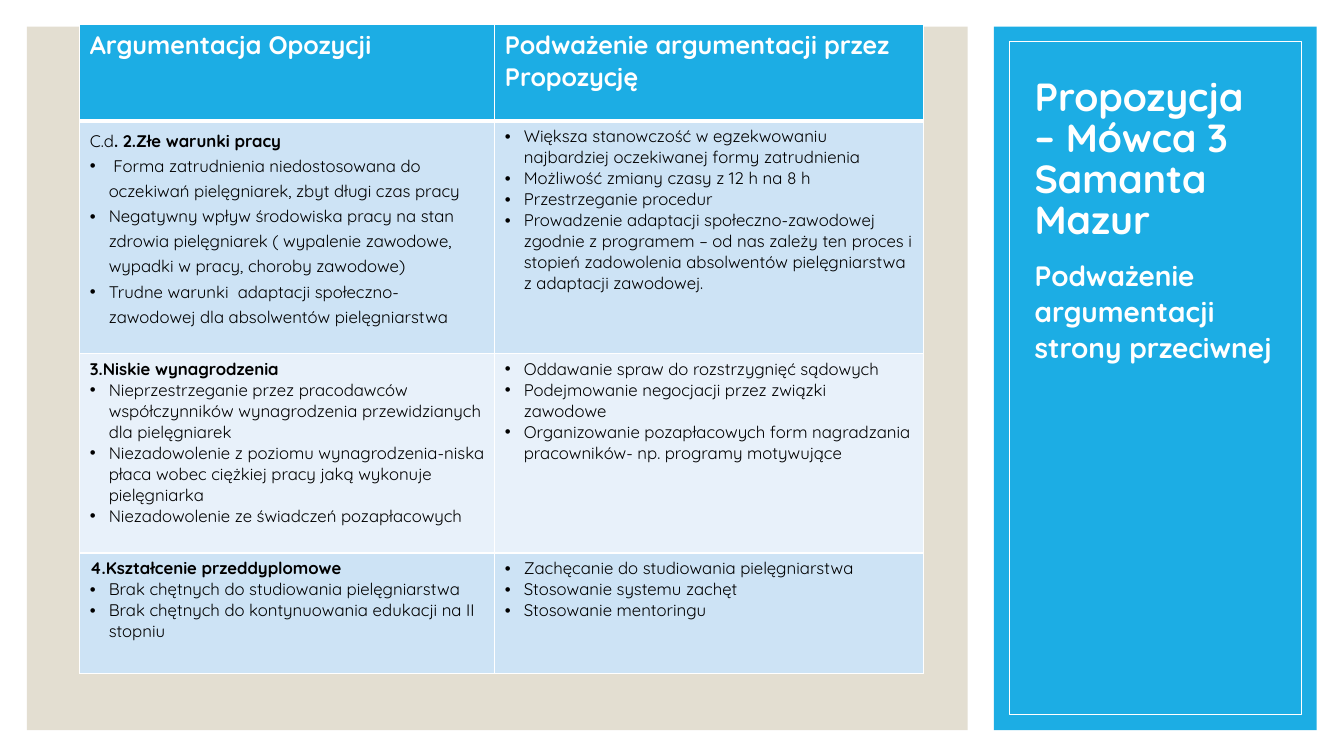
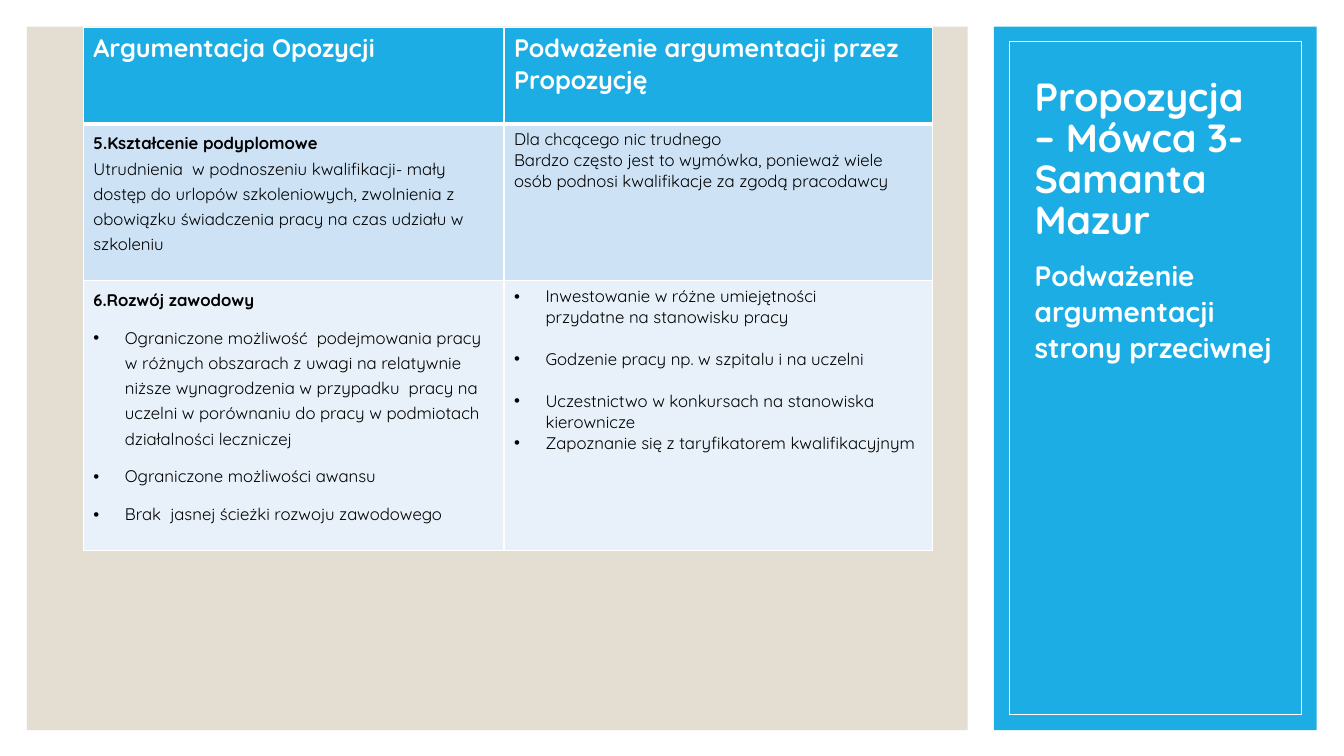
from dataclasses import dataclass

from lxml.etree import SubElement
from pptx import Presentation
from pptx.dml.color import RGBColor
from pptx.enum.shapes import MSO_SHAPE
from pptx.enum.text import MSO_ANCHOR
from pptx.oxml.ns import qn
from pptx.util import Pt


@dataclass(frozen=True)
class Theme:
    font: str = "Quicksand"
    accent: str = "1CADE4"
    sand: str = "E3DED1"
    white: str = "FFFFFF"
    ink: str = "000000"
    row_tints: tuple = ("CDE3F5", "E8F1FA")
    title_size: float = 28
    subtitle_size: float = 20
    header_size: float = 18
    body_size: float = 12
    hairline: float = 0.5
    grid_line: float = 1
    header_line: float = 3


@dataclass
class Entry:
    """One paragraph of a cell; lead is regular text in front of a bold heading."""
    text: str
    bullet: bool = True
    bold: bool = False
    lead: str = ""
    before: float = 0


@dataclass
class CellText:
    entries: list
    leading: float = 1.0
    indent: float = 13.5


def heading(text, lead=""):
    return Entry(text, bullet=False, bold=True, lead=lead)


def plain(text):
    return Entry(text, bullet=False)


def bullets(*texts, before=0):
    return [Entry(text, before=before) for text in texts]


class Deck:
    def __init__(self, theme):
        self.theme = theme
        self.prs = Presentation()
        self.prs.slide_width, self.prs.slide_height = Pt(960), Pt(540)
        self.slide = None

    def add_slide(self, title, subtitle):
        """Start a slide with the shared panels and the side texts."""
        t = self.theme
        self.slide = self.prs.slides.add_slide(self.prs.slide_layouts[6])
        self.rect(19.2, 19, 672, 502.5, fill=t.sand)
        self.rect(710, 19, 230.5, 502.5, fill=t.accent)
        self.rect(720.75, 29.5, 209, 481, line=t.white)
        self.side_text(title, 47.5, 129.5, t.title_size, 0.87, MSO_ANCHOR.BOTTOM)
        self.side_text(subtitle, 180, 276, t.subtitle_size, 1.06, MSO_ANCHOR.TOP)

    def rect(self, left, top, width, height, fill=None, line=None):
        shape = self.slide.shapes.add_shape(
            MSO_SHAPE.RECTANGLE, Pt(left), Pt(top), Pt(width), Pt(height))
        shape.shadow.inherit = False
        if fill:
            shape.fill.solid()
            shape.fill.fore_color.rgb = RGBColor.from_string(fill)
        else:
            shape.fill.background()
        if line:
            shape.line.color.rgb = RGBColor.from_string(line)
            shape.line.width = Pt(self.theme.hairline)
        else:
            shape.line.fill.background()

    def side_text(self, text, top, height, size, leading, anchor):
        box = self.slide.shapes.add_textbox(Pt(732), Pt(top), Pt(191.5), Pt(height))
        frame = box.text_frame
        frame.word_wrap = True
        frame.vertical_anchor = anchor
        frame.text = text
        paragraph = frame.paragraphs[0]
        paragraph.line_spacing = leading
        self.style_runs(paragraph, size, self.theme.white, bold=True)

    def style_runs(self, paragraph, size, color, bold):
        for run in paragraph.runs:
            font = run.font
            font.name, font.size, font.bold = self.theme.font, Pt(size), bold
            font.color.rgb = RGBColor.from_string(color)

    def argument_table(self, left, top, widths, heights, headers, rows):
        t = self.theme
        table = self.slide.shapes.add_table(
            len(heights), len(widths), Pt(left), Pt(top),
            Pt(sum(widths)), Pt(sum(heights))).table
        for column, width in zip(table.columns, widths):
            column.width = Pt(width)
        for row, height in zip(table.rows, heights):
            row.height = Pt(height)
        for cell, header in zip(table.rows[0].cells, headers):
            cell.text_frame.text = header
            self.style_runs(cell.text_frame.paragraphs[0], t.header_size, t.white, True)
            self.paint_cell(cell, t.accent, bottom=t.header_line)
        for index, texts in enumerate(rows):
            for cell, content in zip(table.rows[index + 1].cells, texts):
                self.fill_cell(cell, content)
                self.paint_cell(cell, t.row_tints[index % 2],
                                top=t.grid_line if index else t.header_line)

    def fill_cell(self, cell, content):
        frame = cell.text_frame
        for index, entry in enumerate(content.entries):
            paragraph = frame.add_paragraph() if index else frame.paragraphs[0]
            paragraph.text = entry.text
            paragraph.line_spacing = content.leading
            if entry.before:
                paragraph.space_before = Pt(entry.before)
            self.style_runs(paragraph, self.theme.body_size, self.theme.ink, entry.bold)
            if entry.lead:
                lead = paragraph.runs[0]
                rest = paragraph.add_run()
                rest.text, lead.text = lead.text, entry.lead
                self.style_runs(paragraph, self.theme.body_size, self.theme.ink, True)
                lead.font.bold = False
            if entry.bullet:
                self.add_bullet(paragraph, content.indent)

    def add_bullet(self, paragraph, indent):
        props = paragraph._p.get_or_add_pPr()
        props.set("marL", str(Pt(indent)))
        props.set("indent", str(-Pt(indent)))
        SubElement(props, qn("a:buFont"), typeface="Arial")
        SubElement(props, qn("a:buChar"), char="•")

    def paint_cell(self, cell, fill, top=None, bottom=None):
        """Draw the four borders, then the fill, in the order the schema asks for."""
        props = cell._tc.get_or_add_tcPr()
        thin = self.theme.grid_line
        for side, width in (("L", thin), ("R", thin), ("T", top or thin), ("B", bottom or thin)):
            border = SubElement(props, qn(f"a:ln{side}"), w=str(Pt(width)))
            solid = SubElement(border, qn("a:solidFill"))
            SubElement(solid, qn("a:srgbClr"), val=self.theme.white)
        cell.fill.solid()
        cell.fill.fore_color.rgb = RGBColor.from_string(fill)

    def save(self):
        self.prs.save("out.pptx")


SUBTITLE = "Podważenie argumentacji strony przeciwnej"
HEADERS = ("Argumentacja Opozycji", "Podważenie argumentacji przez Propozycję")

CONDITIONS_PAY_STUDIES = [
    (CellText([heading(". 2.Złe warunki pracy", lead="C.d"), *bullets(
        " Forma zatrudnienia niedostosowana do oczekiwań pielęgniarek, zbyt długi czas pracy",
        "Negatywny wpływ środowiska pracy na stan zdrowia pielęgniarek "
        "( wypalenie zawodowe, wypadki w pracy, choroby zawodowe)",
        "Trudne warunki  adaptacji społeczno- zawodowej dla absolwentów pielęgniarstwa",
    )], leading=1.2),
     CellText(bullets(
         "Większa stanowczość w egzekwowaniu najbardziej oczekiwanej formy zatrudnienia",
         "Możliwość zmiany czasy z 12 h na 8 h",
         "Przestrzeganie procedur",
         "Prowadzenie adaptacji społeczno-zawodowej zgodnie z programem – od nas zależy "
         "ten proces i stopień zadowolenia absolwentów pielęgniarstwa z adaptacji zawodowej."))),
    (CellText([heading("3.Niskie wynagrodzenia"), *bullets(
        "Nieprzestrzeganie przez pracodawców współczynników wynagrodzenia "
        "przewidzianych dla pielęgniarek",
        "Niezadowolenie z poziomu wynagrodzenia-niska płaca wobec ciężkiej pracy "
        "jaką wykonuje pielęgniarka",
        "Niezadowolenie ze świadczeń pozapłacowych")]),
     CellText(bullets(
         "Oddawanie spraw do rozstrzygnięć sądowych",
         "Podejmowanie negocjacji przez związki zawodowe",
         "Organizowanie pozapłacowych form nagradzania pracowników- "
         "np. programy motywujące"))),
    (CellText([heading("4.Kształcenie przeddyplomowe"), *bullets(
        "Brak chętnych do studiowania pielęgniarstwa",
        "Brak chętnych do kontynuowania edukacji na II stopniu")]),
     CellText(bullets(
         "Zachęcanie do studiowania pielęgniarstwa",
         "Stosowanie systemu zachęt",
         "Stosowanie mentoringu"))),
]

TRAINING_CAREER = [
    (CellText([heading("5.Kształcenie podyplomowe"), plain(
        "Utrudnienia  w podnoszeniu kwalifikacji- mały dostęp do urlopów szkoleniowych, "
        "zwolnienia z obowiązku świadczenia pracy na czas udziału w szkoleniu")], leading=1.2),
     CellText([plain("Dla chcącego nic trudnego"), plain(
         "Bardzo często jest to wymówka, ponieważ wiele osób podnosi kwalifikacje "
         "za zgodą pracodawcy")])),
    (CellText([heading("6.Rozwój zawodowy"), *bullets(
        "Ograniczone możliwość  podejmowania pracy w różnych obszarach z uwagi na "
        "relatywnie niższe wynagrodzenia w przypadku  pracy na uczelni w porównaniu "
        "do pracy w podmiotach działalności leczniczej",
        "Ograniczone możliwości awansu",
        "Brak  jasnej ścieżki rozwoju zawodowego", before=9)], leading=1.2, indent=22.5),
     CellText([
         *bullets("Inwestowanie w różne umiejętności\vprzydatne na stanowisku pracy"),
         *bullets("Godzenie pracy np. w szpitalu i na uczelni",
                  "Uczestnictwo w konkursach na stanowiska kierownicze", before=15),
         *bullets("Zapoznanie się z taryfikatorem kwalifikacyjnym")], indent=22.5)),
]


def main():
    deck = Deck(Theme())
    deck.add_slide("Propozycja  – Mówca 3\vSamanta Mazur", SUBTITLE)
    deck.argument_table(57, 17.5, (296.5, 306), (69, 166, 142.5, 86),
                        HEADERS, CONDITIONS_PAY_STUDIES)
    deck.add_slide("Propozycja  – Mówca 3-Samanta Mazur", SUBTITLE)
    deck.argument_table(59.5, 19.5, (300.5, 306), (69, 112, 193),
                        HEADERS, TRAINING_CAREER)
    deck.save()


if __name__ == "__main__":
    main()
